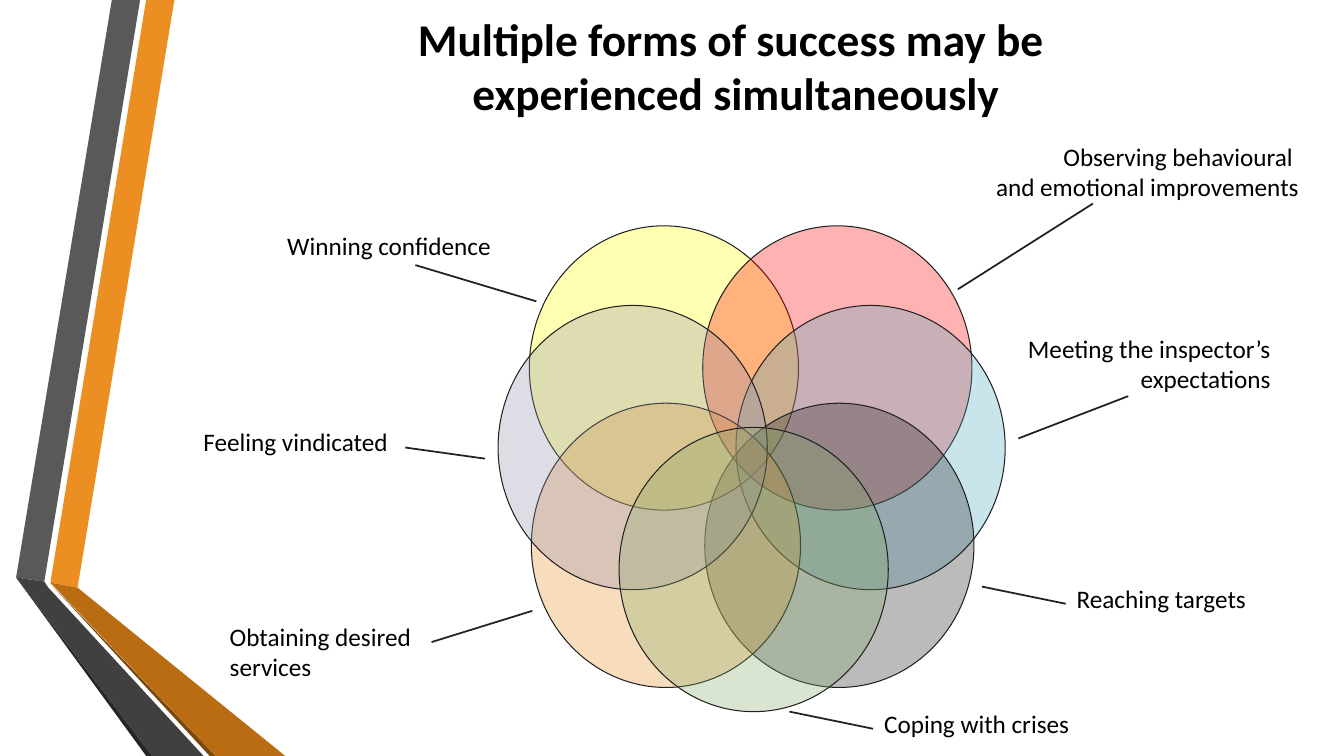
"""Build a slide of seven overlapping circles, each a labelled form of success."""
from dataclasses import dataclass

from lxml.etree import SubElement
from pptx import Presentation
from pptx.dml.color import RGBColor
from pptx.enum.shapes import MSO_CONNECTOR, MSO_SHAPE
from pptx.enum.text import MSO_ANCHOR, MSO_AUTO_SIZE, PP_ALIGN
from pptx.oxml.ns import qn
from pptx.util import Inches, Pt


@dataclass(frozen=True)
class Theme:
    font: str = "Calibri"
    text: str = "000000"
    outline: str = "212121"
    title_size: float = 32.4
    label_size: float = 18
    circle_line: float = 0.75
    leader_line: float = 1.25
    opacity: int = 30


THEME = Theme()
SLIDE_SIZE = (13.33, 7.5)
CIRCLE_SIZE = (2.67, 2.82)
LINE_HEIGHT, LABEL_PADDING = 0.305, 0.1
TITLE = "Multiple forms of success may be \vexperienced simultaneously"
TITLE_AREA = (1.3, 0.04, 12, 1.22)

RIBBONS = [
    ("EB8F22", [(0.5, 5.78), (0.77, 5.83), (1.73, 0), (1.45, 0)]),
    ("595959", [(1.39, 0), (1.11, 0), (0.16, 5.73), (0.44, 5.77)]),
    ("262626", [(0.16, 5.73), (1.45, 7.5), (1.51, 7.5)]),
    ("7B480B", [(0.5, 5.79), (2.08, 7.5), (2.14, 7.5)]),
    ("B96C11", [(0.5, 5.78), (2.14, 7.5), (2.83, 7.5), (0.77, 5.83)]),
    ("404040", [(2.02, 7.5), (0.48, 5.83), (0.44, 5.77), (0.16, 5.73), (1.51, 7.5)]),
]

LEFT, RIGHT = PP_ALIGN.LEFT, PP_ALIGN.RIGHT
SUCCESSES = [
    {"lines": ["Winning confidence"], "align": LEFT, "color": "FFFF00",
     "circle": (5.25, 2.24), "label": (2.75, 2.24, 2.27), "leader": (4.12, 2.63, 5.32, 2.99)},
    {"lines": ["Observing behavioural ", "and emotional improvements"], "align": RIGHT, "color": "FF0000",
     "circle": (6.97, 2.24), "label": (9.7, 1.35, 3.28), "leader": (9.5, 2.87, 10.84, 2.02)},
    {"lines": ["Meeting the inspector’s", "expectations"], "align": RIGHT, "color": "4FA9C1",
     "circle": (7.3, 3.03), "label": (10.05, 3.26, 2.65), "leader": (10.1, 4.35, 11.19, 3.93)},
    {"lines": ["Reaching targets"], "align": LEFT, "color": "212121",
     "circle": (6.99, 4), "label": (10.58, 5.74, 1.96), "leader": (9.74, 5.82, 10.57, 5.99)},
    {"lines": ["Obtaining desired", "services"], "align": LEFT, "color": "EB8F22",
     "circle": (5.27, 4), "label": (2.18, 6.11, 2.07), "leader": (4.28, 6.37, 5.28, 6.06)},
    {"lines": ["Feeling vindicated"], "align": LEFT, "color": "9390AF",
     "circle": (4.94, 3.03), "label": (1.92, 4.18, 2.1), "leader": (4.02, 4.44, 4.81, 4.55)},
    {"lines": ["Coping with crises"], "align": LEFT, "color": "83AA67",
     "circle": (6.14, 4.24), "label": (8.67, 6.98, 2.09), "leader": (7.83, 7.06, 8.66, 7.23)},
]


def inches(values):
    return [Inches(value) for value in values]


def set_attributes(target, values):
    for name, value in values.items():
        setattr(target, name, value)


def format_font(font, size, bold=False):
    set_attributes(font, {"name": THEME.font, "size": Pt(size), "bold": bold})
    font.color.rgb = RGBColor.from_string(THEME.text)


def paint(shape, color):
    shape.shadow.inherit = False
    shape.fill.solid()
    shape.fill.fore_color.rgb = RGBColor.from_string(color)


def format_line(line, width):
    line.color.rgb = RGBColor.from_string(THEME.outline)
    line.width = Pt(width)


def add_title(page):
    title = page.shapes.title
    set_attributes(title, dict(zip(("left", "top", "width", "height"), inches(TITLE_AREA))))
    frame = title.text_frame
    set_attributes(frame, {"text": TITLE, "word_wrap": True, "auto_size": MSO_AUTO_SIZE.NONE,
                           "vertical_anchor": MSO_ANCHOR.MIDDLE})
    para = frame.paragraphs[0]
    para.alignment = PP_ALIGN.CENTER
    for span in para.runs:
        format_font(span.font, THEME.title_size, True)


def add_ribbon(page, color, points):
    start, *rest = [tuple(inches(point)) for point in points]
    builder = page.shapes.build_freeform(*start)
    builder.add_line_segments(rest, close=True)
    ribbon = builder.convert_to_shape()
    paint(ribbon, color)
    ribbon.line.fill.background()


def add_circle(page, corner, color):
    circle = page.shapes.add_shape(MSO_SHAPE.OVAL, *inches(corner + CIRCLE_SIZE))
    paint(circle, color)
    format_line(circle.line, THEME.circle_line)
    tint = circle.fill._xPr.find(qn("a:solidFill"))[0]
    SubElement(tint, qn("a:alpha"), val=str(THEME.opacity * 1000))


def add_label(page, area, lines, align):
    height = LINE_HEIGHT * len(lines) + LABEL_PADDING
    box = page.shapes.add_textbox(*inches(area + (height,)))
    frame = box.text_frame
    set_attributes(frame, {"text": "\n".join(lines), "word_wrap": False,
                           "auto_size": MSO_AUTO_SIZE.SHAPE_TO_FIT_TEXT})
    for para in frame.paragraphs:
        para.alignment = align
        for span in para.runs:
            format_font(span.font, THEME.label_size)


def add_leader(page, ends):
    leader = page.shapes.add_connector(MSO_CONNECTOR.STRAIGHT, *inches(ends))
    format_line(leader.line, THEME.leader_line)
    SubElement(leader._element.spPr, qn("a:effectLst"))


def main():
    deck = Presentation()
    deck.slide_width, deck.slide_height = inches(SLIDE_SIZE)
    page = deck.slides.add_slide(deck.slide_layouts.get_by_name("Title Only"))
    add_title(page)
    for color, points in RIBBONS:
        add_ribbon(page, color, points)
    for success in SUCCESSES:
        add_circle(page, success["circle"], success["color"])
        add_label(page, success["label"], success["lines"], success["align"])
        add_leader(page, success["leader"])
    deck.save("out.pptx")


if __name__ == "__main__":
    main()
